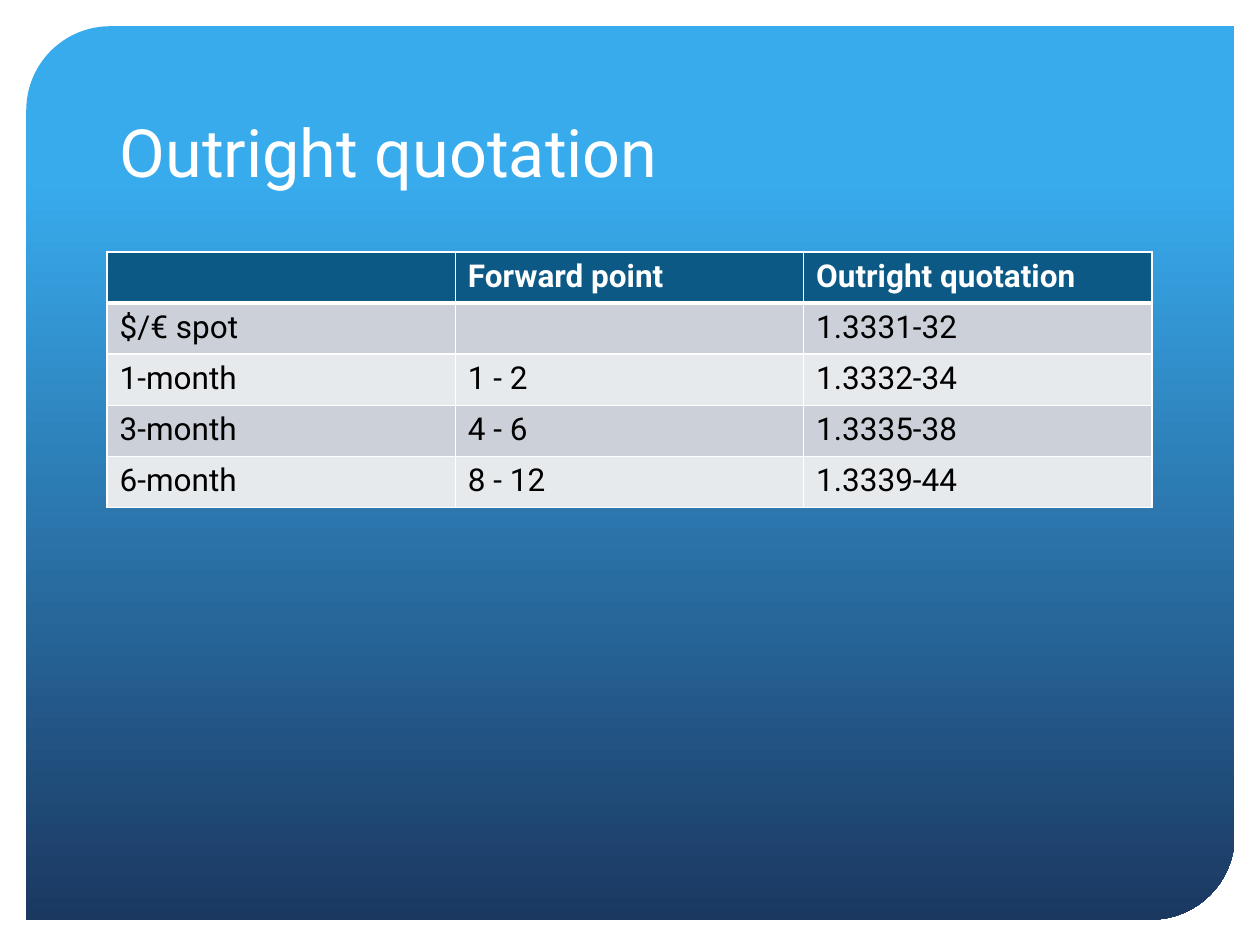
import pptx
import pptx.util
import pptx.dml.color
import pptx.enum.shapes
import pptx.enum.text
from lxml import etree

Cm, Pt = pptx.util.Cm, pptx.util.Pt

# Content
TITLE = "Outright quotation"
ROWS = [
    ("", "Forward point", "Outright quotation"),
    ("$/€ spot", "", "1.3331-32"),
    ("1-month", "1 - 2", "1.3332-34"),
    ("3-month", "4 - 6", "1.3335-38"),
    ("6-month", "8 - 12", "1.3339-44"),
]

THEME = {
    "font": "Roboto", "title_size": 38, "cell_size": 18,
    "white": "FFFFFF", "text": "000000", "header": "0C5986",
    "bands": ("CCD1D9", "E7EAED"),
    "gradient": ((0.17, "38ABED"), (1, "1B3861")),
    "rule": 1, "header_rule": 3,
}
LEFT, WIDTH = 2.16, 21.06
TABLE_TOP, ROW_HEIGHT = 5.08, 1.03


def rgb(name):
    return pptx.dml.color.RGBColor.from_string(name)


def style(p, size, color, bold=False):
    for r in p.runs:
        r.font.name, r.font.size, r.font.bold = THEME["font"], Pt(size), bold
        r.font.color.rgb = rgb(color)


def add_border(cell, side, width):
    tc_pr = cell._tc.get_or_add_tcPr()
    ns = tc_pr.nsmap["a"]
    ln = etree.SubElement(tc_pr, f"{{{ns}}}ln{side}", w=str(Pt(width)))
    fill = etree.SubElement(ln, f"{{{ns}}}solidFill")
    etree.SubElement(fill, f"{{{ns}}}srgbClr", val=THEME["white"])


def add_panel(s, title):
    panel = s.shapes.add_shape(pptx.enum.shapes.MSO_SHAPE.ROUND_2_DIAG_RECTANGLE,
                               Cm(0.53), Cm(0.53), Cm(24.36), Cm(18.01))
    panel.adjustments[0], panel.adjustments[1] = 0.094, 0
    panel.shadow.inherit = False
    panel.line.fill.background()
    panel.fill.gradient()
    panel.fill.gradient_angle = 270
    for stop, (position, color) in zip(panel.fill.gradient_stops, THEME["gradient"]):
        stop.position, stop.color.rgb = position, rgb(color)
    title.element.addprevious(panel.element)  # behind the title


def format_title(title):
    title.left, title.top = Cm(LEFT), Cm(1.07)
    title.width, title.height = Cm(WIDTH), Cm(2.9)
    tf = title.text_frame
    tf.text = TITLE
    tf.word_wrap = True
    tf.vertical_anchor = pptx.enum.text.MSO_ANCHOR.BOTTOM
    tf.paragraphs[0].alignment = pptx.enum.text.PP_ALIGN.LEFT
    style(tf.paragraphs[0], THEME["title_size"], THEME["white"])


def add_quotes(s):
    columns = len(ROWS[0])
    table = s.shapes.add_table(len(ROWS), columns, Cm(LEFT), Cm(TABLE_TOP),
                               Cm(WIDTH), Cm(ROW_HEIGHT * len(ROWS))).table
    for column in table.columns:
        column.width = Cm(WIDTH / columns)
    for i, row in enumerate(ROWS):
        table.rows[i].height = Cm(ROW_HEIGHT)
        header = i == 0
        fill = THEME["header"] if header else THEME["bands"][(i - 1) % 2]
        # The rule under the header is shared with the first body row
        heavy = {0: "B", 1: "T"}.get(i)
        for j, text in enumerate(row):
            cell = table.cell(i, j)
            cell.text = text
            style(cell.text_frame.paragraphs[0], THEME["cell_size"],
                  THEME["white"] if header else THEME["text"], header)
            for side in "LRTB":
                add_border(cell, side, THEME["header_rule" if side == heavy else "rule"])
            cell.fill.solid()
            cell.fill.fore_color.rgb = rgb(fill)


def main():
    prs = pptx.Presentation()
    prs.slide_width, prs.slide_height = Cm(25.4), Cm(19.05)
    s = prs.slides.add_slide(prs.slide_layouts[5])
    s.background.fill.solid()
    s.background.fill.fore_color.rgb = rgb(THEME["white"])
    title = s.shapes.title
    add_panel(s, title)
    format_title(title)
    add_quotes(s)
    prs.save("out.pptx")


if __name__ == "__main__":
    main()
